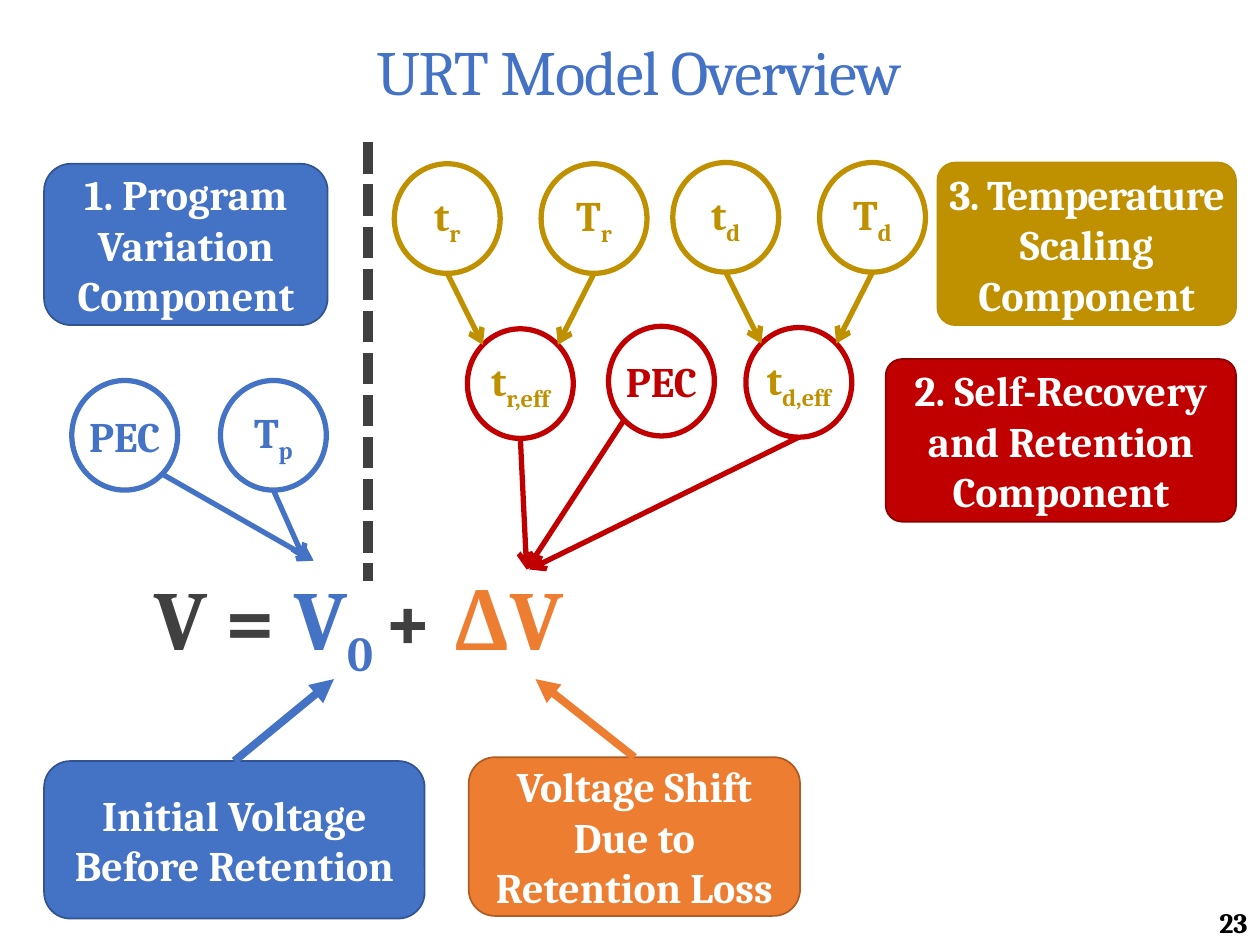
from dataclasses import dataclass
from math import cos, radians, sin
from typing import Any

import pptx
import pptx.dml.color
import pptx.enum.dml
import pptx.enum.shapes
import pptx.enum.text
import pptx.oxml
import pptx.oxml.ns
import pptx.util

COLS, ROWS = 100, 75
FONT = "Cambria"
HEX = {
    "blue": "4472C4", "navy": "325491", "gold": "BF9000", "ochre": "BD8E00",
    "red": "C00000", "wine": "8E0000", "orange": "ED7D31", "rust": "AF5C24",
    "gray": "404040", "white": "FFFFFF", "black": "000000",
}
Point = tuple[float, float]
Shape = pptx.enum.shapes.MSO_SHAPE
Align = pptx.enum.text.PP_ALIGN
Anchor = pptx.enum.text.MSO_ANCHOR

deck = pptx.Presentation()
deck.slide_width, deck.slide_height = pptx.util.Inches(10), pptx.util.Inches(7.5)
slide = deck.slides.add_slide(deck.slide_layouts[5])


@dataclass
class Run:
    text: str
    color: str
    sub: bool = False
    gap: int = 0


@dataclass
class Node:
    col: float
    row: float
    text: str
    sub: str
    ink: str
    edge: str
    wide: float = 8.4
    high: float = 8.7

    def port(self, angle: float) -> Point:
        turn = radians(angle)
        return (self.col + self.wide / 2 * (1 + cos(turn)),
                self.row + self.high / 2 * (1 + sin(turn)))


@dataclass
class Box:
    col: float
    row: float
    wide: float
    high: float
    runs: list[Run]
    fill: str
    edge: str
    bend: float = 0.1667
    side: float = 0.1


def rgb(name: str) -> pptx.dml.color.RGBColor:
    return pptx.dml.color.RGBColor.from_string(HEX[name])


def across(col: float) -> int:
    return round(deck.slide_width * col / COLS)


def down(row: float) -> int:
    return round(deck.slide_height * row / ROWS)


def area(col: float, row: float, wide: float, high: float) -> tuple[int, ...]:
    return across(col), down(row), across(wide), down(high)


def write(frame: Any, runs: list[Run], size: float, align: Any = Align.CENTER,
          anchor: Any = Anchor.MIDDLE, bold: bool = True) -> None:
    frame.vertical_anchor = anchor
    para = frame.paragraphs[0]
    para.alignment = align
    for item in runs:
        run = para.add_run()
        run.text = item.text
        font = run.font
        font.name, font.size, font.bold = FONT, pptx.util.Pt(size), bold
        font.color.rgb = rgb(item.color)
        props = run._r.get_or_add_rPr()
        if item.sub:
            props.set("baseline", "-25000")
        if item.gap:
            props.set("spc", str(item.gap))


def paint(shape: Any, fill: str, edge: str, width: float) -> None:
    shape.shadow.inherit = False
    shape.fill.solid()
    shape.fill.fore_color.rgb = rgb(fill)
    shape.line.color.rgb = rgb(edge)
    shape.line.width = pptx.util.Pt(width)


def draw_node(host: Any, node: Node) -> None:
    shape = host.add_shape(Shape.OVAL, *area(node.col, node.row, node.wide, node.high))
    paint(shape, "white", node.edge, 3)
    frame = shape.text_frame
    frame.word_wrap = True
    frame.margin_left = frame.margin_right = frame.margin_top = frame.margin_bottom = 0
    runs = [Run(node.text, node.ink)]
    if node.sub:
        runs.append(Run(node.sub, node.ink, True))
    write(frame, runs, 24)


def draw_box(host: Any, box: Box) -> Any:
    shape = host.add_shape(Shape.ROUNDED_RECTANGLE,
                           *area(box.col, box.row, box.wide, box.high))
    shape.adjustments[0] = box.bend
    paint(shape, box.fill, box.edge, 1)
    frame = shape.text_frame
    frame.word_wrap = True
    frame.margin_left = frame.margin_right = pptx.util.Inches(box.side)
    write(frame, box.runs, 24)
    return shape


def draw_line(host: Any, start: Point, end: Point, color: str,
              width: float = 3, head: str = "arrow") -> Any:
    line = host.add_connector(pptx.enum.shapes.MSO_CONNECTOR.STRAIGHT,
                              across(start[0]), down(start[1]),
                              across(end[0]), down(end[1]))
    line.line.color.rgb = rgb(color)
    line.line.width = pptx.util.Pt(width)
    if head:
        tip = pptx.oxml.parse_xml(
            f'<a:tailEnd {pptx.oxml.ns.nsdecls("a")} type="{head}"/>')
        line.line._get_or_add_ln().append(tip)
    line._element.spPr.append(
        pptx.oxml.parse_xml(f'<a:effectLst {pptx.oxml.ns.nsdecls("a")}/>'))
    return line


def draw_note(box: Box, end: Point) -> None:
    host = slide.shapes.add_group_shape().shapes
    shape = draw_box(host, box)
    line = draw_line(host, (box.col + box.wide / 2, box.row), end, box.fill, 4.5, "triangle")
    line.begin_connect(shape, 0)


def main() -> None:
    shapes = slide.shapes
    title = shapes.title
    title.left, title.top, title.width, title.height = area(0, 0, 100, 11.9)
    write(title.text_frame, [Run("URT Model Overview", "blue", gap=-70)], 36, bold=False)
    para = title.text_frame.paragraphs[0]
    para.line_spacing = 0.9
    props = para._p.get_or_add_pPr()
    props.set("marL", str(pptx.util.Inches(0.14)))
    props.set("indent", "0")

    page = shapes.add_textbox(*area(89.6, 71.3, 10.4, 3.7)).text_frame
    page.word_wrap = True
    write(page, [Run("23", "black")], 16, Align.RIGHT, Anchor.BOTTOM)

    sums = shapes.add_textbox(*area(10.6, 44.5, 35.8, 9.1)).text_frame
    sums.word_wrap = False
    sums.auto_size = pptx.enum.text.MSO_AUTO_SIZE.SHAPE_TO_FIT_TEXT
    write(sums, [Run("V = ", "gray"), Run("V", "blue"), Run("0 ", "blue", True),
                 Run("+ ", "gray"), Run("ΔV", "orange")], 48, anchor=Anchor.TOP)

    start = shapes.add_group_shape().shapes
    cycle = Node(5.7, 30.2, "PEC", "", "blue", "blue")
    heat = Node(17.5, 30.2, "T", "p", "blue", "blue")
    draw_line(start, cycle.port(45), (24.9, 44.5), "blue")
    for node in (cycle, heat):
        draw_node(start, node)
    draw_line(start, heat.port(90), (24.2, 44.5), "blue")

    wall = draw_line(shapes, (29.2, 11.3), (29.2, 46.1), "gray", 6, "")
    wall.line.dash_style = pptx.enum.dml.MSO_LINE.SQUARE_DOT

    draw_box(shapes, Box(3.5, 13, 22.5, 12.8,
                         [Run("1. Program Variation Component", "white")], "blue", "navy"))

    mids = []
    for key, col, row in (("r", 31.3, 13), ("d", 53.4, 12.9)):
        time = Node(col, row, "t", key, "gold", "gold")
        temp = Node(col + 11.65, row, "T", key, "gold", "gold")
        mid = Node(col + 5.8, row + 13.1, "t", f"{key},eff", "gold", "red")
        for node in (time, temp, mid):
            draw_node(shapes, node)
        draw_line(shapes, time.port(90), mid.port(225), "gold")
        draw_line(shapes, temp.port(90), mid.port(315), "gold")
        mids.append(mid)

    wear = Node(48.3, 25.9, "PEC", "", "red", "red")
    draw_node(shapes, wear)
    for node, angle, col in ((mids[0], 90, 41.8), (wear, 135, 41.8), (mids[1], 90, 42)):
        draw_line(shapes, node.port(angle), (col, 45.2), "red")

    draw_note(Box(3.5, 60.4, 30.2, 12.5,
                  [Run("Initial Voltage Before Retention", "white")], "blue", "navy"),
              (26.5, 53.9))
    draw_note(Box(37.2, 60.1, 26.3, 12.6,
                  [Run("Voltage Shift Due to Retention Loss", "white")], "orange", "rust"),
              (42.5, 53.9))

    draw_box(shapes, Box(74.4, 12.9, 23.7, 12.9,
                         [Run("3. Temperature ", "white", gap=-50),
                          Run("Scaling Component", "white")], "gold", "ochre", 0.11, 0))
    draw_box(shapes, Box(70.3, 28.5, 27.8, 12.9,
                         [Run("2. Self-Recovery and Retention Component", "white")],
                         "red", "wine", 0.1))
    deck.save("out.pptx")


if __name__ == "__main__":
    main()
